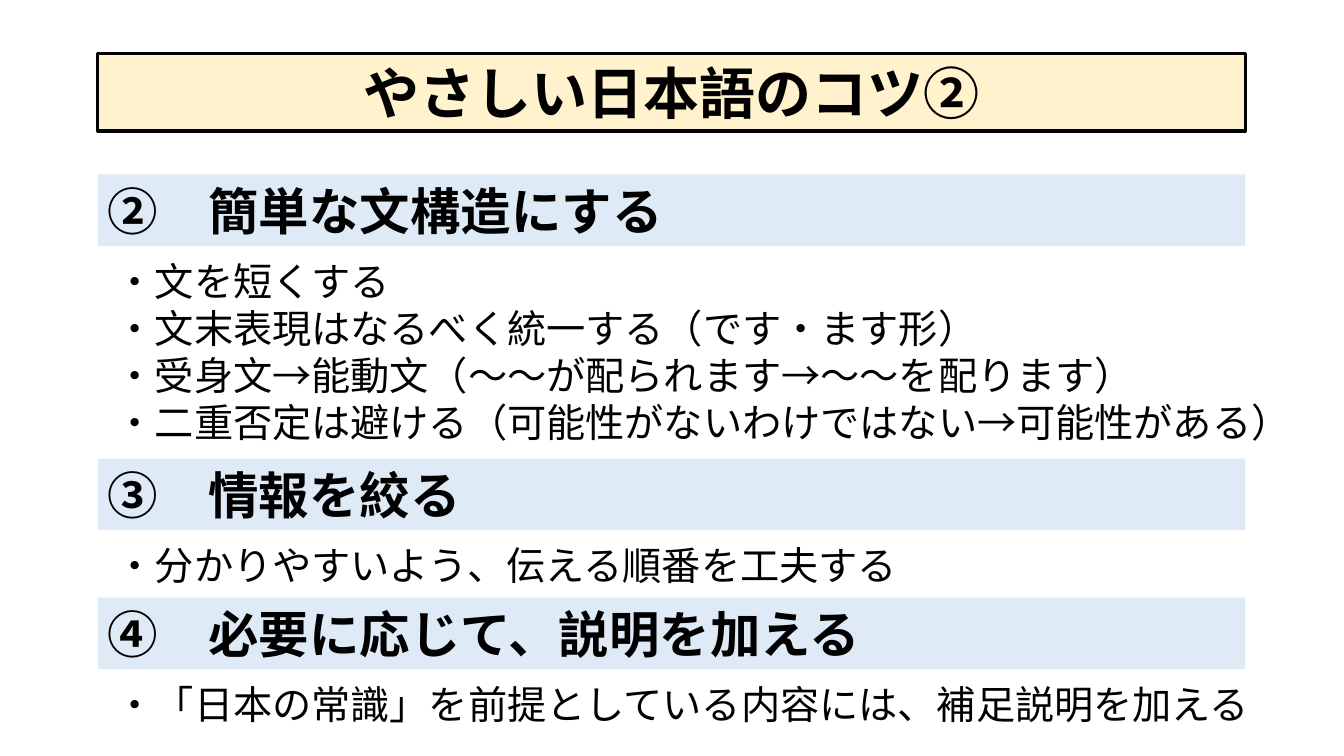
from lxml.etree import SubElement
from pptx import Presentation
from pptx.dml.color import RGBColor
from pptx.enum.shapes import MSO_SHAPE
from pptx.enum.text import MSO_ANCHOR, MSO_AUTO_SIZE, PP_ALIGN
from pptx.oxml.ns import qn
from pptx.util import Inches, Pt

FONT = "Noto Sans CJK JP"
COLORS = {"text": "000000", "title": "FFF2CC", "heading": "DEEBF7"}
WIDTH, HEIGHT = 13.33, 7.5
LEFT, BAND_W = 0.97, 11.38
TITLE_TOP, TITLE_H = 0.53, 0.77
HEADING_H, LINE_H, PADDING = 0.71, 0.47, 0.1
GAP, INDENT = 0.06, 0.08

TITLE = "やさしい日本語のコツ②"
SECTIONS = [
    (1.73, "②　簡単な文構造にする", [
        "・文を短くする",
        "・文末表現はなるべく統一する（です・ます形）",
        "・受身文→能動文（～～が配られます→～～を配ります）",
        "・二重否定は避ける（可能性がないわけではない→可能性がある）",
    ]),
    (4.55, "③　情報を絞る", ["・分かりやすいよう、伝える順番を工夫する"]),
    (5.93, "④　必要に応じて、説明を加える",
     ["・「日本の常識」を前提としている内容には、補足説明を加える"]),
]


def rgb(name):
    return RGBColor.from_string(COLORS[name])


def write(sp, lines, size, bold=False, align=PP_ALIGN.LEFT, anchor=MSO_ANCHOR.TOP):
    tf = sp.text_frame
    tf.word_wrap = True
    tf.auto_size = MSO_AUTO_SIZE.SHAPE_TO_FIT_TEXT
    tf.vertical_anchor = anchor
    for i, line in enumerate(lines):
        p = tf.paragraphs[0] if i == 0 else tf.add_paragraph()
        p.alignment = align
        r = p.add_run()
        r.text = line
        r.font.size = Pt(size)
        r.font.bold = bold
        r.font.color.rgb = rgb("text")
        r.font.name = FONT
        # Japanese glyphs take the East Asian typeface
        SubElement(r.font._element, qn("a:ea")).set("typeface", FONT)


def add_band(slide, left, top, width, height, text, fill, size,
             border=None, align=PP_ALIGN.LEFT):
    sp = slide.shapes.add_shape(MSO_SHAPE.RECTANGLE, Inches(left), Inches(top),
                                Inches(width), Inches(height))
    sp.shadow.inherit = False
    sp.fill.solid()
    sp.fill.fore_color.rgb = rgb(fill)
    if border:
        sp.line.color.rgb = rgb("text")
        sp.line.width = Pt(border)
    else:
        sp.line.fill.background()
    write(sp, [text], size, bold=True, align=align, anchor=MSO_ANCHOR.MIDDLE)


def add_section(slide, left, top, width, heading, points):
    """Heading band with its points below, which run on to the slide's right edge."""
    add_band(slide, left, top, width, HEADING_H, heading, "heading", 36)
    body_left = left + INDENT
    sp = slide.shapes.add_textbox(
        Inches(body_left), Inches(top + HEADING_H + GAP),
        Inches(WIDTH - body_left), Inches(PADDING + LINE_H * len(points)))
    write(sp, points, 28)


def main():
    prs = Presentation()
    prs.slide_width, prs.slide_height = Inches(WIDTH), Inches(HEIGHT)
    slide = prs.slides.add_slide(prs.slide_layouts[6])
    add_band(slide, LEFT, TITLE_TOP, BAND_W, TITLE_H, TITLE, "title", 40,
             border=2.25, align=PP_ALIGN.CENTER)
    for top, heading, points in SECTIONS:
        add_section(slide, LEFT, top, BAND_W, heading, points)
    prs.save("out.pptx")


if __name__ == "__main__":
    main()
